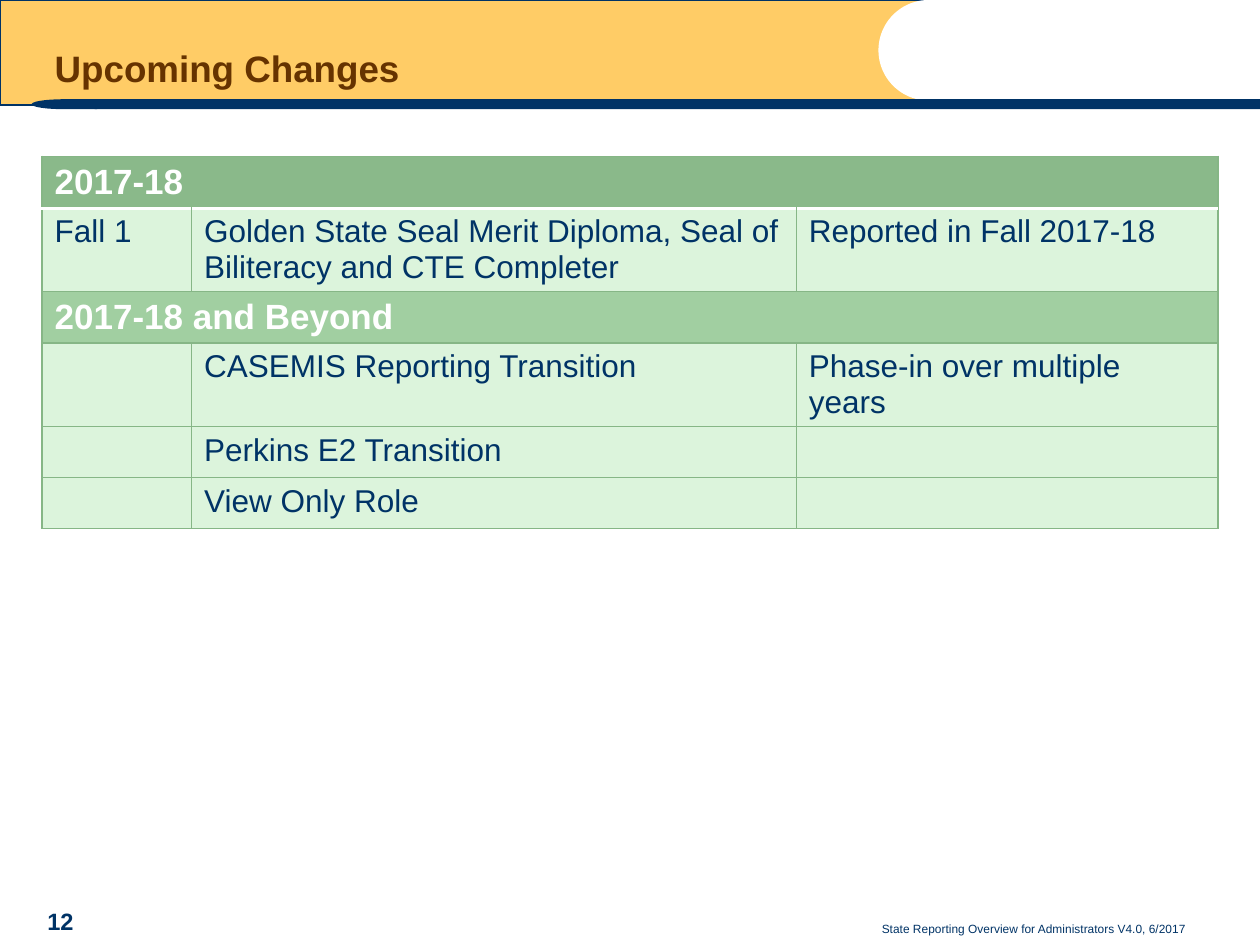
from lxml.etree import SubElement
from pptx import Presentation
from pptx.dml.color import RGBColor
from pptx.enum.shapes import MSO_SHAPE
from pptx.enum.text import MSO_ANCHOR, PP_ALIGN
from pptx.oxml.ns import qn
from pptx.util import Pt

NAVY = RGBColor(0x00, 0x33, 0x66)
GOLD = RGBColor(0xFF, 0xCC, 0x66)
BROWN = RGBColor(0x66, 0x33, 0x00)
WHITE = RGBColor(0xFF, 0xFF, 0xFF)
HEAD = RGBColor(0x8A, 0xB9, 0x8A)
BAND = RGBColor(0xA1, 0xCF, 0xA1)
PALE = RGBColor(0xDC, 0xF4, 0xDC)
EDGE = RGBColor(0x86, 0xB6, 0x86)


def write(para, text, size, color, bold=False):
    run = para.add_run()
    run.text = text
    run.font.name = "Arial"
    run.font.size = Pt(size)
    run.font.bold = bold
    run.font.color.rgb = color


def border(cell, side, color, width):
    line = SubElement(cell._tc.get_or_add_tcPr(), qn("a:ln" + side), w=str(Pt(width)))
    fill = SubElement(line, qn("a:solidFill"))
    SubElement(fill, qn("a:srgbClr"), val=str(color))


deck = Presentation()
deck.slide_width, deck.slide_height = Pt(720), Pt(540)
slide = deck.slides.add_slide(deck.slide_layouts[5])
shapes = slide.shapes

parts = [
    (MSO_SHAPE.RECTANGLE, 0, 0, 528, 60, GOLD),
    (MSO_SHAPE.OVAL, 502, 0, 57.5, 57.5, WHITE),
    (MSO_SHAPE.ROUNDED_RECTANGLE, 54, 56.7, 666, 5.7, NAVY),
    (MSO_SHAPE.FLOWCHART_DELAY, 18, 56.7, 37.5, 5.7, NAVY),
]
for kind, left, top, width, height, color in parts:
    part = shapes.add_shape(kind, Pt(left), Pt(top), Pt(width), Pt(height))
    part.shadow.inherit = False
    part.fill.solid()
    part.fill.fore_color.rgb = color
    if kind == MSO_SHAPE.RECTANGLE:
        part.line.color.rgb = NAVY
        part.line.width = Pt(0.75)
    else:
        part.line.fill.background()
    if kind == MSO_SHAPE.ROUNDED_RECTANGLE:
        part.adjustments[0] = 0
    if kind == MSO_SHAPE.FLOWCHART_DELAY:
        part._element.spPr.xfrm.set("flipH", "1")

title = shapes.title
shapes._spTree.append(title._element)
title.left, title.top, title.width, title.height = Pt(24), Pt(13.7), Pt(432), Pt(41.75)
title.text_frame.vertical_anchor = MSO_ANCHOR.BOTTOM
para = title.text_frame.paragraphs[0]
para.alignment = PP_ALIGN.LEFT
para.line_spacing = 0.9
write(para, "Upcoming Changes", 21, BROWN, True)

rows = [
    (29.6, HEAD, ["2017-18"]),
    (47.4, PALE, ["Fall 1",
                  "Golden State Seal Merit Diploma, Seal of Biliteracy and CTE Completer",
                  "Reported in Fall 2017-18"]),
    (29.6, BAND, ["2017-18 and Beyond"]),
    (47.4, PALE, ["", "CASEMIS Reporting Transition", "Phase-in over multiple years"]),
    (29.2, PALE, ["", "Perkins E2 Transition", ""]),
    (29.2, PALE, ["", "View Only Role", ""]),
]
total = sum(row[0] for row in rows)
table = shapes.add_table(len(rows), 3, Pt(24), Pt(89.3), Pt(672), Pt(total)).table
table.horz_banding = False
for col, width in zip(table.columns, (85.5, 345.5, 241)):
    col.width = Pt(width)
for i, (height, color, texts) in enumerate(rows):
    table.rows[i].height = Pt(height)
    wide = len(texts) == 1
    if wide:
        table.cell(i, 0).merge(table.cell(i, 2))
    for j in range(3):
        cell = table.cell(i, j)
        for side in "LRTB":
            if (i, side) in ((0, "B"), (1, "T")):
                border(cell, side, WHITE, 2)
            else:
                border(cell, side, EDGE, 0.75)
        cell.fill.solid()
        cell.fill.fore_color.rgb = color
        para = cell.text_frame.paragraphs[0]
        para.font.size = Pt(18)
        if j < len(texts) and texts[j]:
            write(para, texts[j], 20 if wide else 18, WHITE if wide else NAVY, wide)

notes = [
    (300, 519, 384.7, 19.5, PP_ALIGN.RIGHT, 6.8, False,
     "State Reporting Overview for Administrators V4.0, 6/2017"),
    (11.5, 511, 46, 26.8, PP_ALIGN.CENTER, 13.5, True, "12"),
]
for left, top, width, height, align, size, bold, text in notes:
    box = shapes.add_textbox(Pt(left), Pt(top), Pt(width), Pt(height))
    box.text_frame.word_wrap = True
    box.text_frame.vertical_anchor = MSO_ANCHOR.BOTTOM
    para = box.text_frame.paragraphs[0]
    para.alignment = align
    write(para, text, size, NAVY, bold)

deck.save("out.pptx")
